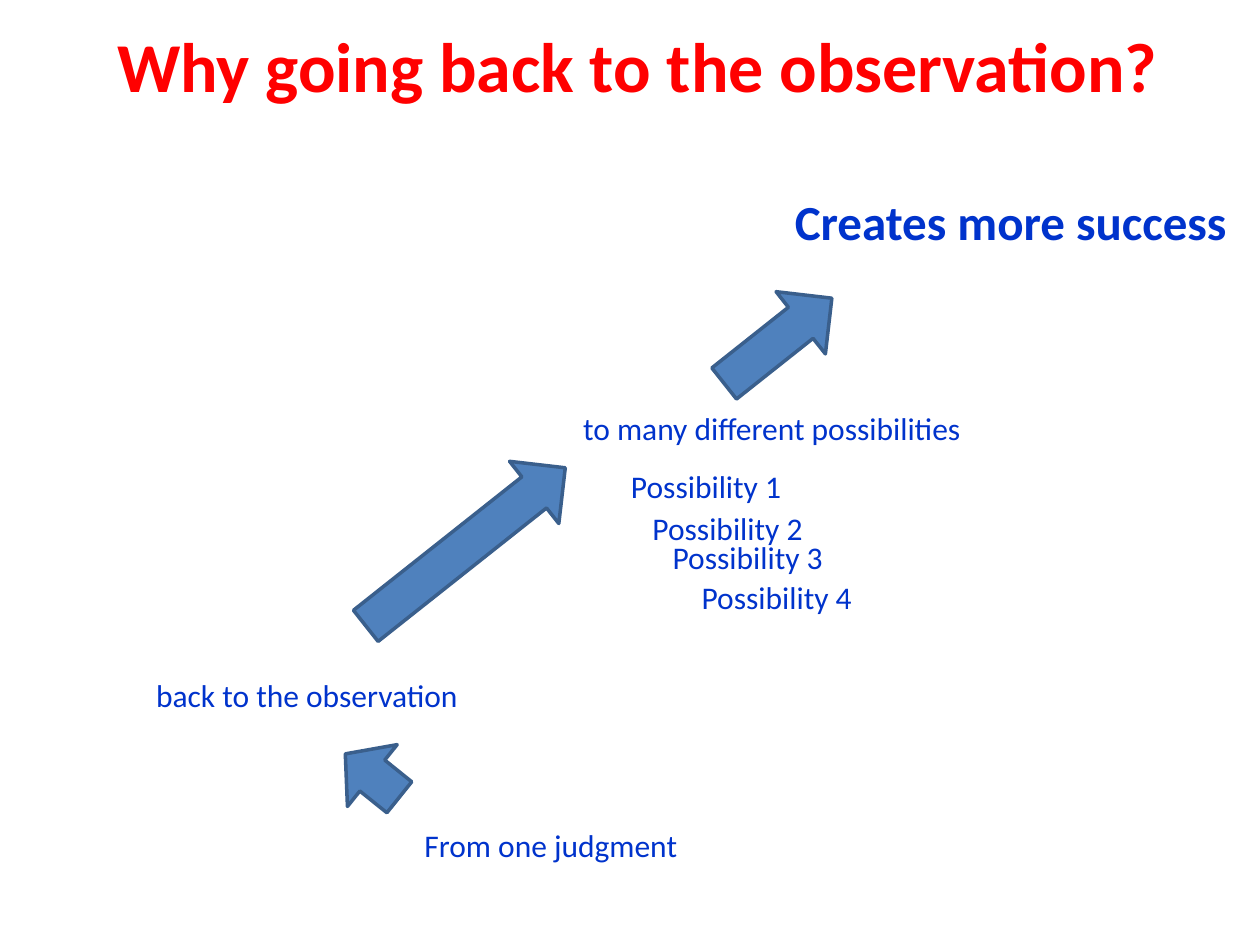
from pptx import Presentation
from pptx.dml.color import RGBColor
from pptx.enum.shapes import MSO_SHAPE
from pptx.enum.text import MSO_ANCHOR, PP_ALIGN
from pptx.util import Inches, Pt

UP_ARROW = MSO_SHAPE.UP_ARROW
TOP = MSO_ANCHOR.TOP
LEFT = PP_ALIGN.LEFT

RED = RGBColor(0xFF, 0x00, 0x00)
BLUE = RGBColor(0x00, 0x33, 0xCC)
ARROW_FILL = RGBColor(0x4F, 0x81, 0xBD)
ARROW_LINE = RGBColor(0x3A, 0x5F, 0x8C)

TITLE_FONT = {"name": "Calibri", "size": Pt(40), "bold": True}
RESULT_FONT = {"name": "Calibri", "size": Pt(28), "bold": True}
STEP_FONT = {"name": "Calibri", "size": Pt(18), "bold": False}

ARROW_WIDTH = 0.63
LINE_HEIGHT = 0.4


def write(text_frame, text, font_format, color):
    text_frame.text = text
    text_frame.word_wrap = False
    text_frame.vertical_anchor = TOP
    paragraph = text_frame.paragraphs[0]
    paragraph.alignment = LEFT
    font = paragraph.runs[0].font
    for attribute, value in font_format.items():
        setattr(font, attribute, value)
    font.color.rgb = color


def place_title(slide, box, text):
    title = slide.shapes.title
    title.left, title.top, title.width, title.height = map(Inches, box)
    write(title.text_frame, text, TITLE_FONT, RED)


def add_label(slide, box, text, font_format=STEP_FONT):
    label = slide.shapes.add_textbox(*map(Inches, box))
    write(label.text_frame, text, font_format, BLUE)


def add_possibilities(slide, box, offsets):
    """Staggered list; each offset is (right, down) from the box corner."""
    left, top, width, height = box
    for number, (right, down) in enumerate(offsets, start=1):
        add_label(slide, (left + right, top + down, width, height),
                  f"Possibility {number}")


def add_arrow(slide, box, rotation):
    arrow = slide.shapes.add_shape(UP_ARROW, *map(Inches, box))
    arrow.rotation = rotation
    arrow.shadow.inherit = False
    arrow.fill.solid()
    arrow.fill.fore_color.rgb = ARROW_FILL
    arrow.line.color.rgb = ARROW_LINE
    arrow.line.width = Pt(2)


def main():
    prs = Presentation()
    prs.slide_width, prs.slide_height = Inches(10), Inches(7.5)
    slide = prs.slides.add_slide(prs.slide_layouts[5])

    place_title(slide, (0.83, 0.13, 8.56, 0.77),
                "Why going back to the observation?")

    # Steps from judgment up to success
    add_label(slide, (3.27, 6.51, 2.41, LINE_HEIGHT), "From one judgment")
    add_label(slide, (1.14, 5.32, 2.63, LINE_HEIGHT), "back to the observation")
    add_label(slide, (4.53, 3.2, 3.24, LINE_HEIGHT),
              "to many different possibilities")
    add_label(slide, (6.21, 1.47, 3.67, 0.57), "Creates more success",
              RESULT_FONT)
    add_possibilities(slide, (4.91, 3.66, 1.4, LINE_HEIGHT),
                      [(0, 0), (0.17, 0.33), (0.33, 0.56), (0.56, 0.88)])

    # Arrows between the steps
    add_arrow(slide, (2.64, 5.88, ARROW_WIDTH, 0.55), 308.8)
    add_arrow(slide, (3.38, 3.33, ARROW_WIDTH, 2.02), 51.6)
    add_arrow(slide, (5.86, 2.16, ARROW_WIDTH, 1.09), 51.6)

    prs.save("out.pptx")


if __name__ == "__main__":
    main()
